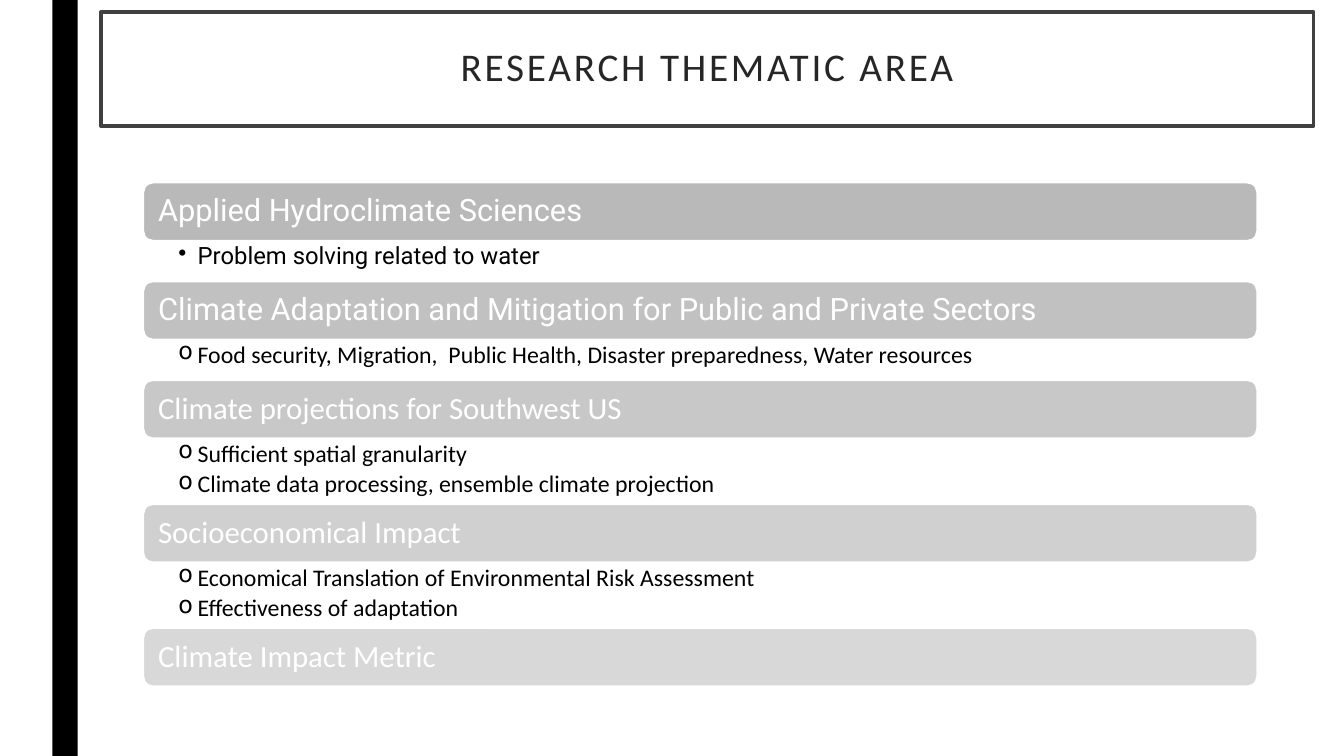
from dataclasses import dataclass

from lxml.etree import SubElement
from pptx import Presentation
from pptx.dml.color import RGBColor
from pptx.enum.shapes import MSO_SHAPE as SHAPE
from pptx.enum.text import MSO_ANCHOR as ANCHOR, PP_ALIGN as ALIGN
from pptx.oxml.ns import qn
from pptx.util import Inches, Pt

LEFT, WIDTH, BAR_HEIGHT = 1.42, 11.05, 0.58


@dataclass
class Theme:
    title: str
    items: list[str]
    opacity: int
    title_font: str = "Calibri"
    item_font: str = "Calibri"
    bullet: str = "o"


THEMES = [
    Theme("Applied Hydroclimate Sciences", ["Problem solving related to water"],
          90, "Roboto", "Roboto", "•"),
    Theme("Climate Adaptation and Mitigation for Public and Private Sectors",
          ["Food security, Migration,  Public Health, Disaster preparedness, Water resources"],
          80, "Roboto"),
    Theme("Climate projections for Southwest US",
          ["Sufficient spatial granularity",
           "Climate data processing, ensemble climate projection"], 70),
    Theme("Socioeconomical Impact",
          ["Economical Translation of Environmental Risk Assessment",
           "Effectiveness of adaptation"], 60),
    Theme("Climate Impact Metric", [], 50),
]


def rgb(color: str) -> RGBColor:
    return RGBColor.from_string(color)


def add_box(s, kind, x: float, y: float, w: float, h: float, fill: str,
            line: str = "", weight: float = 0):
    sp = s.shapes.add_shape(kind, Inches(x), Inches(y), Inches(w), Inches(h))
    sp.shadow.inherit = False
    sp.fill.solid()
    sp.fill.fore_color.rgb = rgb(fill)
    if line:
        sp.line.color.rgb = rgb(line)
        sp.line.width = Pt(weight)
    else:
        sp.line.fill.background()
    return sp


def set_margins(tf, left: float, top: float, right: float) -> None:
    tf.word_wrap = True
    tf.margin_left, tf.margin_right = Inches(left), Inches(right)
    tf.margin_top = tf.margin_bottom = Inches(top)


def format_paragraph(p, size: float, font: str, color: str, align=ALIGN.LEFT):
    p.alignment = align
    p.line_spacing = 0.9
    for r in p.runs:
        r.font.size = Pt(size)
        r.font.name = font
        r.font.color.rgb = rgb(color)


def add_bullet(p, char: str) -> None:
    pPr = p._p.get_or_add_pPr()
    pPr.set("marL", str(Inches(0.19)))
    pPr.set("indent", str(Inches(-0.19)))
    SubElement(pPr, qn("a:buChar")).set("char", char)


def add_bar(s, theme: Theme, y: float) -> None:
    sp = add_box(s, SHAPE.ROUNDED_RECTANGLE, LEFT, y, WIDTH, BAR_HEIGHT,
                 "B2B2B2", "FFFFFF", 1.5)
    color = sp.fill._xPr.find(qn("a:solidFill"))[0]
    SubElement(color, qn("a:alpha")).set("val", str(theme.opacity * 1000))
    tf = sp.text_frame
    tf.text = theme.title
    tf.vertical_anchor = ANCHOR.MIDDLE
    set_margins(tf, 0.12, 0.09, 0.12)
    format_paragraph(tf.paragraphs[0], 22, theme.title_font, "FFFFFF")


def add_items(s, theme: Theme, y: float, h: float) -> None:
    tf = s.shapes.add_textbox(Inches(LEFT), Inches(y), Inches(WIDTH), Inches(h)).text_frame
    set_margins(tf, 0.35, 0.03, 0.17)
    tf.text = "\n".join(theme.items)
    for p in tf.paragraphs:
        format_paragraph(p, 17, theme.item_font, "000000")
        p.space_after = Pt(3.4)
        add_bullet(p, theme.bullet)


def add_title(s, text: str) -> None:
    sp = add_box(s, SHAPE.RECTANGLE, 1, 0.12, 12.03, 1.13, "FFFFFF", "404040", 2.5)
    tf = sp.text_frame
    tf.text = text
    tf.vertical_anchor = ANCHOR.MIDDLE
    set_margins(tf, 0.2, 0.2, 0.2)
    p = tf.paragraphs[0]
    format_paragraph(p, 28, "Calibri", "262626", ALIGN.CENTER)
    p.runs[0].font._element.set("spc", "200")


def main() -> None:
    prs = Presentation()
    prs.slide_width, prs.slide_height = Inches(13.33), Inches(7.5)
    s = prs.slides.add_slide(prs.slide_layouts[6])
    add_box(s, SHAPE.RECTANGLE, 0.52, 0, 0.25, 7.5, "000000")
    y = 1.81
    for theme in THEMES:
        add_bar(s, theme, y)
        y += BAR_HEIGHT
        if theme.items:
            h = 0.15 + 0.25 * len(theme.items)
            add_items(s, theme, y, h)
            y += h
    add_title(s, "RESEARCH THEMATIC AREA")
    prs.save("out.pptx")


if __name__ == "__main__":
    main()
